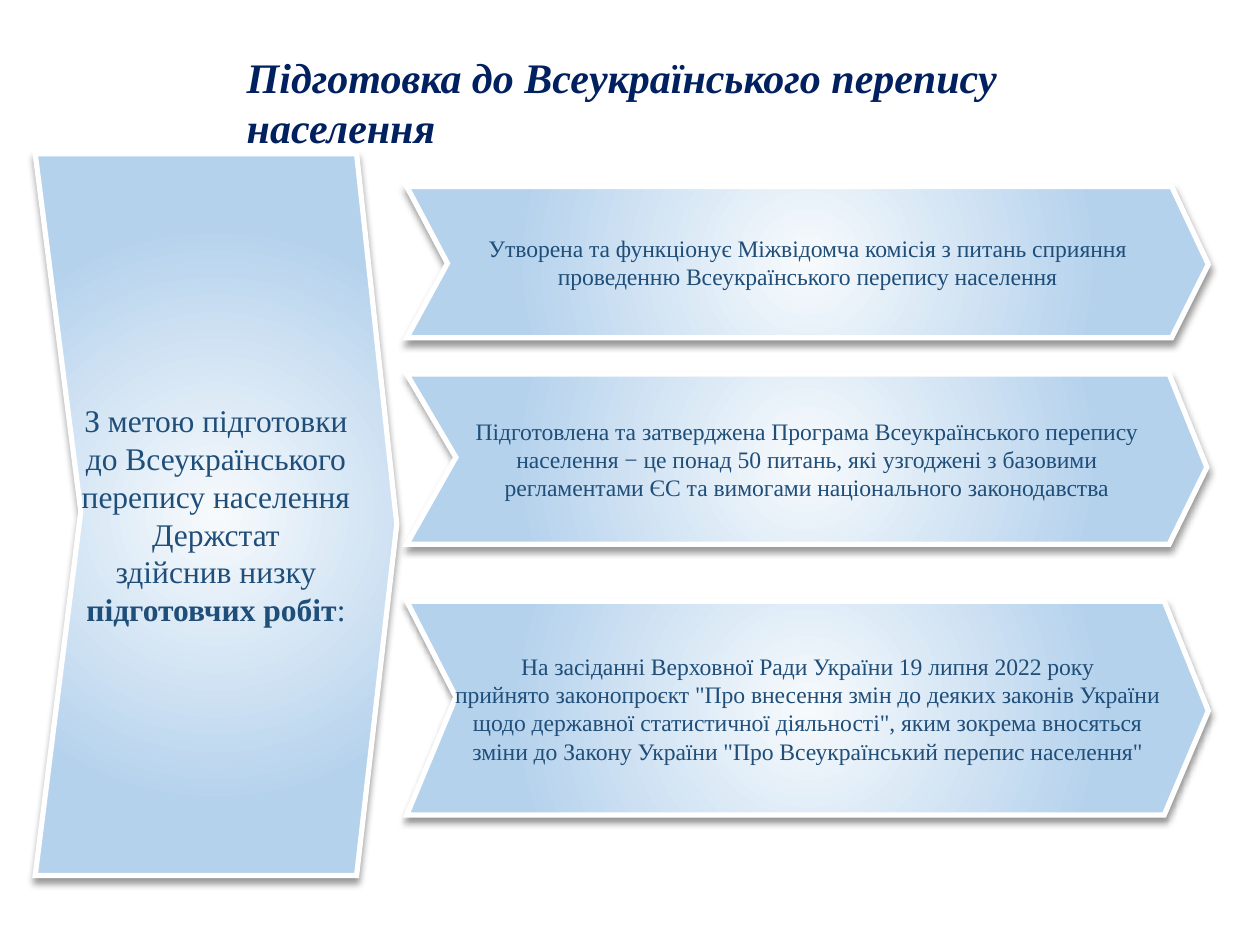
from typing import NamedTuple

from lxml.etree import SubElement
from pptx import Presentation
from pptx.dml.color import RGBColor as Rgb
from pptx.enum.text import MSO_ANCHOR as Anchor, MSO_AUTO_SIZE as Auto, PP_ALIGN as Align
from pptx.oxml.ns import qn
from pptx.util import Cm, Pt

FONT = "Times New Roman"
COLORS = {
    "title": "002060",
    "text": "1F4E79",
    "core": "F7FAFD",
    "rim": "B5D2EC",
    "edge": "FFFFFF",
    "shade": "000000",
}


class Arrow(NamedTuple):
    """Notched arrow; all lengths in centimetres."""
    left: float
    top: float
    base: float
    neck: float
    tip: tuple[float, float]
    notch: tuple[float, float]
    size: float
    lines: list[str]
    bold: str = ""


ARROWS = [
    Arrow(0.71, 3.1, 17.65, 7.19, (8, 10.57), (1.63, 10.31), 18, [
        "З метою підготовки",
        "до Всеукраїнського перепису населення",
        "Держстат",
        "здійснив низку",
        "підготовчих робіт:",
    ], "підготовчих робіт"),
    Arrow(8.2, 3.76, 6.81, 23.62, (24.36, 5.33), (9.02, 5.31), 13.5, [
        "Утворена та функціонує Міжвідомча комісія з питань сприяння",
        "проведенню Всеукраїнського перепису населення",
    ]),
    Arrow(8.2, 7.54, 10.97, 23.57, (24.33, 9.42), (9.19, 9.22), 13.5, [
        "Підготовлена та затверджена Програма Всеукраїнського перепису",
        "населення − це понад 50 питань, які узгоджені з базовими",
        "регламентами ЄС та вимогами національного законодавства",
    ]),
    Arrow(8.2, 12.12, 16.43, 23.47, (24.36, 14.33), (9.19, 14.05), 13.5, [
        "На засіданні Верховної Ради України 19 липня 2022 року",
        'прийнято законопроєкт "Про внесення змін до деяких законів України',
        'щодо державної статистичної діяльності", яким зокрема вносяться',
        'зміни до Закону України "Про Всеукраїнський перепис населення"',
    ]),
]


def tint(name: str) -> Rgb:
    return Rgb.from_string(COLORS[name])


def style(font, size: float, color: str, bold: bool = False, italic: bool = False) -> None:
    font.name, font.size = FONT, Pt(size)
    font.bold, font.italic = bold, italic
    font.color.rgb = tint(color)


def glow(shape) -> None:
    """Fill with a gradient that spreads in circles from the centre."""
    shape.fill.gradient()
    for stop, name, pos in zip(shape.fill.gradient_stops, ("core", "rim"), (0, 0.72)):
        stop.color.rgb, stop.position = tint(name), pos
    grad = shape.element.spPr.find(qn("a:gradFill"))
    grad.remove(grad.find(qn("a:lin")))
    ring = SubElement(grad, qn("a:path"), path="circle")
    SubElement(ring, qn("a:fillToRect"), {side: "50000" for side in "ltrb"})


def edge(shape) -> None:
    shape.line.color.rgb = tint("edge")
    shape.line.width = Pt(3)
    line = shape.element.spPr.find(qn("a:ln"))
    SubElement(line, qn("a:miter"), lim="800000")


def shade(shape) -> None:
    """Drop a soft shadow straight down."""
    shape.shadow.inherit = False
    group = shape.element.spPr.find(qn("a:effectLst"))
    drop = SubElement(group, qn("a:outerShdw"), blurRad=str(Pt(4)), dist=str(Pt(3)),
                      dir="5400000", rotWithShape="0")
    color = SubElement(drop, qn("a:srgbClr"), val=COLORS["shade"])
    SubElement(color, qn("a:alpha"), val="40000")


def write(shape, arrow: Arrow) -> None:
    frame = shape.text_frame
    frame.text = "\n".join(arrow.lines)
    frame.word_wrap = True
    frame.vertical_anchor = Anchor.MIDDLE
    for para in frame.paragraphs:
        para.alignment = Align.CENTER
        text = para.text
        if arrow.bold and text.startswith(arrow.bold):
            para.runs[0].text = arrow.bold
            para.add_run().text = text.removeprefix(arrow.bold)
        for run in para.runs:
            style(run.font, arrow.size, "text", run.text == arrow.bold)


def draw(slide, arrow: Arrow) -> None:
    points = [(arrow.neck, arrow.top), (arrow.left, arrow.top), arrow.notch,
              (arrow.left, arrow.base), (arrow.neck, arrow.base), arrow.tip]
    start, *rest = [(Cm(x), Cm(y)) for x, y in points]
    form = slide.shapes.build_freeform(*start)
    form.add_line_segments(rest, close=True)
    shape = form.convert_to_shape()
    glow(shape)
    edge(shape)
    shade(shape)
    write(shape, arrow)


def head(slide) -> None:
    title = slide.shapes.title
    title.left, title.top, title.width, title.height = Cm(4.72), Cm(0.91), Cm(19.63), Cm(1.27)
    frame = title.text_frame
    frame.text = "Підготовка до Всеукраїнського перепису населення"
    frame.word_wrap = True
    frame.auto_size = Auto.NONE
    frame.vertical_anchor = Anchor.TOP
    frame.margin_right = Cm(0.6)
    para = frame.paragraphs[0]
    para.alignment = Align.LEFT
    style(para.runs[0].font, 24, "title", bold=True, italic=True)


def main() -> None:
    deck = Presentation()
    deck.slide_width, deck.slide_height = Cm(25.4), Cm(19.05)
    slide = deck.slides.add_slide(deck.slide_layouts[5])
    head(slide)
    for arrow in ARROWS:
        draw(slide, arrow)
    deck.save("out.pptx")


if __name__ == "__main__":
    main()
